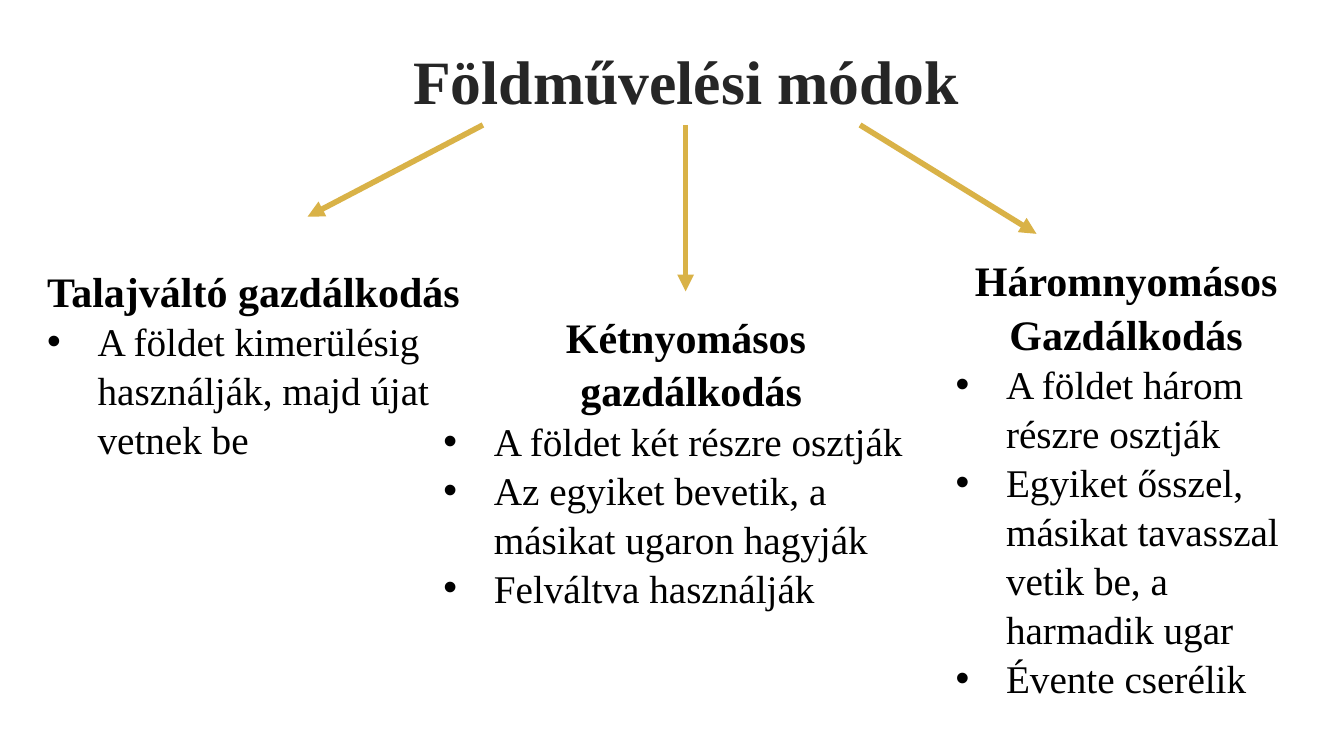
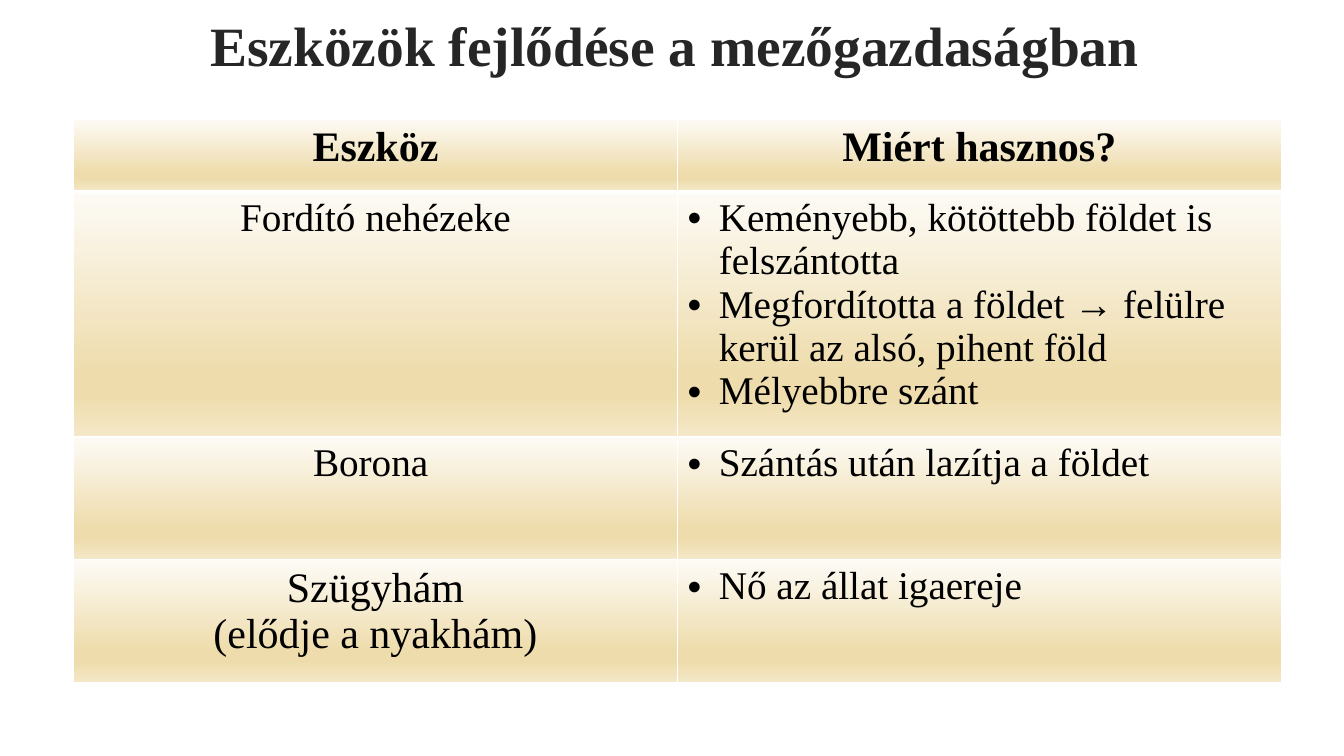
from lxml import etree
from pptx import Presentation
from pptx import util as u
from pptx.dml.color import RGBColor
from pptx.enum import shapes, text
from pptx.oxml.ns import qn

FONT = "Times New Roman"
BLACK, TITLE_COLOR, GOLD, WHITE = "000000", "262626", "D9B247", "FFFFFF"
CELL_GRADIENT = [(0, "FDFBF6"), (74, "EEDCAC"), (83, "EEDCAC"), (100, "F4E8C8")]
HEADING_SIZE, BODY_SIZE = 30, 28
HEADING_SPACING, BODY_SPACING = 1.06, 1.04

METHODS_TITLE = "Földművelési módok"
# left, top, width, height, heading alignment, heading lines, bullets
METHODS = [
    (0.37, 2.55, 4.32, 2.02, "left", ["Talajváltó gazdálkodás"],
     ["A földet kimerülésig használják, majd újat vetnek be"]),
    (4.3, 3.01, 5.01, 3, "center", ["Kétnyomásos", " gazdálkodás"],
     ["A földet két részre osztják",
      "Az egyiket bevetik, a másikat ugaron hagyják",
      "Felváltva használják"]),
    (9.38, 2.45, 3.58, 4.41, "center", ["Háromnyomásos Gazdálkodás"],
     ["A földet három részre osztják",
      "Egyiket ősszel, másikat tavasszal vetik be, a harmadik ugar",
      "Évente cserélik"]),
]
ARROW_TOP = 1.24
ARROWS = [(4.79, 3.05, 2.15), (6.8, 6.8, 2.89), (8.53, 10.28, 2.32)]  # from x, to x, to y

TOOLS_TITLE = "Eszközök fejlődése a mezőgazdaságban"
TOOLS_HEADER = ["Eszköz", "Miért hasznos?"]
# tool lines, tool text size, benefits
TOOLS = [
    (["Fordító nehézeke"], BODY_SIZE,
     ["Keményebb, kötöttebb földet is felszántotta",
      "Megfordította a földet → felülre kerül az alsó, pihent föld",
      "Mélyebbre szánt"]),
    (["Borona "], BODY_SIZE, ["Szántás után lazítja a földet"]),
    (["Szügyhám", "(elődje a nyakhám)"], HEADING_SIZE, ["Nő az állat igaereje"]),
]
TABLE_LEFT, TABLE_TOP, TABLE_HEIGHT = 0.73, 1.18, 5.6
COLUMN_WIDTH, HEADER_HEIGHT, ROW_HEIGHT = 5.99, 0.72, 1.22

ALIGNMENTS = {"left": text.PP_ALIGN.LEFT, "center": text.PP_ALIGN.CENTER}


def rgb(color):
    return RGBColor.from_string(color)


def add_xml(parent, tag, **attributes):
    return etree.SubElement(parent, qn(tag), {k: str(v) for k, v in attributes.items()})


def write(frame, lines, size=BODY_SIZE, bold=False, color=BLACK, align="left",
          spacing=None, indent=0):
    """Append one paragraph per line; a positive indent gives bullets."""
    for line in lines:
        paragraph = frame.paragraphs[0]
        if paragraph.runs:
            paragraph = frame.add_paragraph()
        if indent:
            properties = paragraph._p.get_or_add_pPr()
            properties.set("marL", str(u.Inches(indent)))
            properties.set("indent", str(u.Inches(-indent)))
            add_xml(properties, "a:buFont", typeface="Arial")
            add_xml(properties, "a:buChar", char="•")
        paragraph.alignment = ALIGNMENTS[align]
        paragraph.line_spacing = spacing
        run = paragraph.add_run()
        run.text = line
        run.font.name, run.font.size, run.font.bold = FONT, u.Pt(size), bold
        run.font.color.rgb = rgb(color)


def add_text_box(slide, left, top, width, height):
    box = slide.shapes.add_textbox(*map(u.Inches, (left, top, width, height)))
    box.text_frame.word_wrap = True
    return box.text_frame


def add_title(slide, title, left, top, height, size):
    frame = add_text_box(slide, left, top, 10.5, height)
    frame.vertical_anchor = text.MSO_ANCHOR.MIDDLE
    write(frame, [title], size=size, bold=True, color=TITLE_COLOR, align="center",
          spacing=HEADING_SPACING)


def add_arrow(slide, start_x, end_x, end_y):
    arrow = slide.shapes.add_connector(
        shapes.MSO_CONNECTOR.STRAIGHT,
        *map(u.Inches, (start_x, ARROW_TOP, end_x, end_y)))
    arrow.line.color.rgb = rgb(GOLD)
    arrow.line.width = u.Pt(4)
    add_xml(arrow.line._get_or_add_ln(), "a:tailEnd", type="triangle")
    add_xml(arrow._element.spPr, "a:effectLst")


def style_cell(cell, top_width, bottom_width):
    """Give the cell white borders and the vertical gradient."""
    properties = cell._tc.get_or_add_tcPr()
    for side, width in (("L", 1), ("R", 1), ("T", top_width), ("B", bottom_width)):
        border = add_xml(properties, f"a:ln{side}", w=u.Pt(width))
        add_xml(add_xml(border, "a:solidFill"), "a:srgbClr", val=WHITE)
    gradient = add_xml(properties, "a:gradFill", rotWithShape=1)
    stops = add_xml(gradient, "a:gsLst")
    for position, color in CELL_GRADIENT:
        add_xml(add_xml(stops, "a:gs", pos=position * 1000), "a:srgbClr", val=color)
    add_xml(gradient, "a:lin", ang=90 * 60000, scaled=0)


def build_methods(slide):
    add_title(slide, METHODS_TITLE, 1.56, 0.23, 1.08, 44)
    for arrow in ARROWS:
        add_arrow(slide, *arrow)
    for *place, align, heading, bullets in METHODS:
        frame = add_text_box(slide, *place)
        write(frame, heading, size=HEADING_SIZE, bold=True, align=align,
              spacing=HEADING_SPACING)
        write(frame, bullets, spacing=BODY_SPACING, indent=0.5)


def build_tools(slide):
    add_title(slide, TOOLS_TITLE, 1.44, 0.17, 0.5, 39.6)
    heights = [HEADER_HEIGHT] + [ROW_HEIGHT] * len(TOOLS)
    table_frame = slide.shapes.add_table(
        len(heights), 2,
        *map(u.Inches, (TABLE_LEFT, TABLE_TOP, 2 * COLUMN_WIDTH, TABLE_HEIGHT)))
    table = table_frame.table
    table.first_row = table.horz_banding = False
    for column in table.columns:
        column.width = u.Inches(COLUMN_WIDTH)
    for index, height in enumerate(heights):
        table.rows[index].height = u.Inches(height)
        for cell in table.rows[index].cells:
            style_cell(cell, 3 if index == 1 else 1, 3 if index == 0 else 1)
    table_frame.height = u.Inches(TABLE_HEIGHT)
    for column, label in enumerate(TOOLS_HEADER):
        write(table.cell(0, column).text_frame, [label], size=HEADING_SIZE, bold=True,
              align="center")
    for row, (tool, size, benefits) in enumerate(TOOLS, start=1):
        write(table.cell(row, 0).text_frame, tool, size=size, align="center")
        write(table.cell(row, 1).text_frame, benefits, indent=0.31)


def main():
    presentation = Presentation()
    presentation.slide_width, presentation.slide_height = u.Inches(13.33), u.Inches(7.5)
    for build in (build_methods, build_tools):
        build(presentation.slides.add_slide(presentation.slide_layouts[6]))
    presentation.save("out.pptx")


if __name__ == "__main__":
    main()
